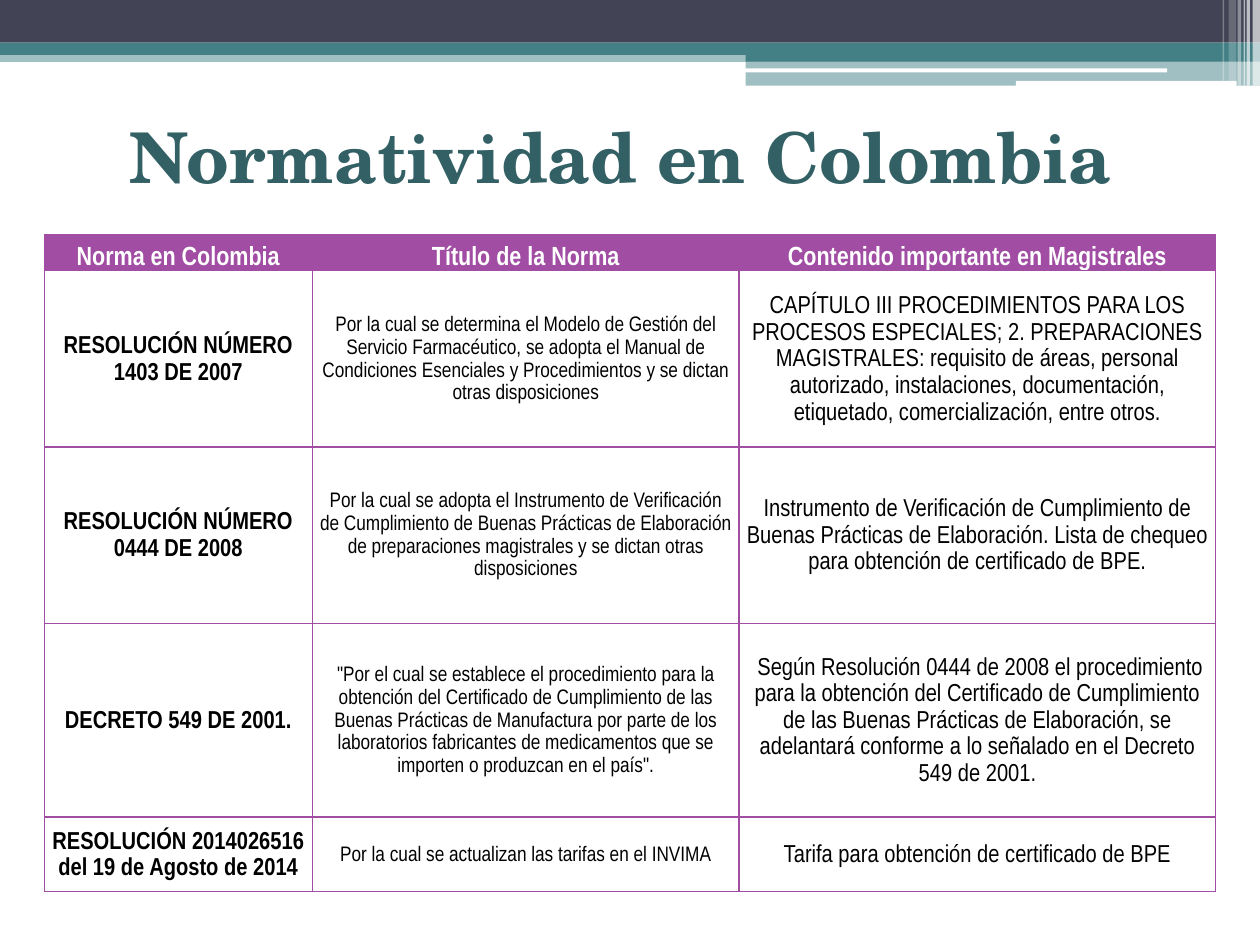
from dataclasses import dataclass

from lxml import etree
from pptx import Presentation
from pptx.dml.color import RGBColor
from pptx.enum.shapes import MSO_SHAPE
from pptx.enum.text import MSO_ANCHOR, PP_ALIGN
from pptx.oxml.ns import qn
from pptx.util import Cm, Pt

RECT = MSO_SHAPE.RECTANGLE
ROUNDED = MSO_SHAPE.ROUNDED_RECTANGLE
CENTER = PP_ALIGN.CENTER
MIDDLE = MSO_ANCHOR.MIDDLE
BOTTOM = MSO_ANCHOR.BOTTOM

COLORS = {
    "navy": "424456",
    "teal": "438086",
    "title": "326065",
    "purple": "A04DA3",
    "white": "FFFFFF",
    "black": "000000",
}
TITLE_FONT = "TeX Gyre Schola"
TABLE_FONT = "Arial Narrow"


@dataclass
class Band:
    left: float
    top: float
    width: float
    height: float
    color: str
    opacity: int = 100
    shape: MSO_SHAPE = RECT


@dataclass
class TextStyle:
    font: str
    size: float
    color: str
    bold: bool = False


@dataclass
class Norm:
    name: str
    title: str
    content: str
    height: float


BANDS = [
    Band(0, 1.02, 25.4, 0.23, "teal", 50),
    Band(0, 0, 25.4, 0.86, "navy"),
    Band(0, 0.86, 25.4, 0.25, "teal"),
    Band(15.03, 0.99, 10.37, 0.25, "teal"),
    Band(15.03, 1.23, 10.37, 0.5, "teal", 50),
    Band(15.02, 1.38, 8.51, 0.08, "white", shape=ROUNDED),
    Band(20.48, 1.63, 4.45, 0.1, "white", shape=ROUNDED),
    Band(25.25, 0, 0.15, 1.73, "white", 65),
    Band(25.13, 0, 0.07, 1.73, "white", 65),
    Band(25.07, 0, 0.03, 1.73, "white", 60),
    Band(24.95, 0, 0.07, 1.73, "white", 40),
    Band(24.77, 0, 0.15, 1.63, "white", 20),
    Band(24.65, 0, 0.03, 1.63, "white", 30),
]

HEADER = Norm("Norma en Colombia", "Título de la Norma",
              "Contenido importante en Magistrales", 0.72)
NORMS = [
    Norm("RESOLUCIÓN NÚMERO 1403 DE 2007",
         "Por la cual se determina el Modelo de Gestión del Servicio Farmacéutico, "
         "se adopta el Manual de Condiciones Esenciales y Procedimientos y se dictan "
         "otras disposiciones",
         "CAPÍTULO III PROCEDIMIENTOS PARA LOS PROCESOS ESPECIALES; 2. PREPARACIONES "
         "MAGISTRALES: requisito de áreas, personal autorizado, instalaciones, "
         "documentación, etiquetado, comercialización, entre otros.", 3.55),
    Norm("RESOLUCIÓN NÚMERO 0444 DE 2008",
         "Por la cual se adopta el Instrumento de Verificación de Cumplimiento de "
         "Buenas Prácticas de Elaboración de preparaciones magistrales y se dictan "
         "otras disposiciones",
         "Instrumento de Verificación de Cumplimiento de Buenas Prácticas de "
         "Elaboración. Lista de chequeo para obtención de certificado de BPE.", 3.55),
    Norm("DECRETO 549 DE 2001.",
         '"Por el cual se establece el procedimiento para la obtención del Certificado '
         "de Cumplimiento de las Buenas Prácticas de Manufactura por parte de los "
         "laboratorios fabricantes de medicamentos que se importen o produzcan en el "
         'país".',
         " Según Resolución 0444 de 2008 el procedimiento para la obtención del "
         "Certificado de Cumplimiento de las Buenas Prácticas de Elaboración, se "
         "adelantará conforme a lo señalado en el Decreto 549 de 2001.", 3.91),
    Norm("RESOLUCIÓN 2014026516 del 19 de Agosto de 2014",
         "Por la cual se actualizan las tarifas en el INVIMA",
         "Tarifa para obtención de certificado de BPE", 1.5),
]
COLUMN_WIDTHS = [5.41, 8.6, 9.61]
HEADER_STYLE = TextStyle(TABLE_FONT, 15, "white", True)
NORM_STYLES = [
    TextStyle(TABLE_FONT, 14, "black", True),
    TextStyle(TABLE_FONT, 12, "black"),
    TextStyle(TABLE_FONT, 14, "black"),
]


def rgb(name: str) -> RGBColor:
    return RGBColor.from_string(COLORS[name])


def draw_band(slide, band: Band) -> None:
    bar = slide.shapes.add_shape(band.shape, Cm(band.left), Cm(band.top),
                                 Cm(band.width), Cm(band.height))
    bar.shadow.inherit = False
    bar.line.fill.background()
    bar.fill.solid()
    bar.fill.fore_color.rgb = rgb(band.color)
    if band.opacity < 100:
        color = bar.fill._xPr.find(qn("a:solidFill"))[0]
        etree.SubElement(color, qn("a:alpha"), val=str(band.opacity * 1000))


def write_text(frame, text: str, style: TextStyle, spacing: float = 1.0) -> None:
    frame.word_wrap = True
    paragraph = frame.paragraphs[0]
    paragraph.alignment = CENTER
    paragraph.line_spacing = spacing
    run = paragraph.add_run()
    run.text = text
    run.font.name = style.font
    run.font.size = Pt(style.size)
    run.font.bold = style.bold
    run.font.color.rgb = rgb(style.color)


def draw_borders(cell, column: int) -> None:
    last = len(COLUMN_WIDTHS) - 1
    widths = {
        "a:lnL": 1 if column > 0 else 0.75,
        "a:lnR": 1 if column < last else 0.75,
        "a:lnT": 0.75,
        "a:lnB": 0.75,
    }
    properties = cell._tc.get_or_add_tcPr()
    for position, (side, width) in enumerate(widths.items()):
        border = etree.Element(qn(side), w=str(Pt(width)))
        fill = etree.SubElement(border, qn("a:solidFill"))
        etree.SubElement(fill, qn("a:srgbClr"), val=COLORS["purple"])
        properties.insert(position, border)


def draw_table(slide) -> None:
    rows = [HEADER, *NORMS]
    table = slide.shapes.add_table(
        len(rows), len(COLUMN_WIDTHS), Cm(0.89), Cm(4.73),
        Cm(sum(COLUMN_WIDTHS)), Cm(sum(row.height for row in rows))).table
    table.horz_banding = False
    for column, width in zip(table.columns, COLUMN_WIDTHS):
        column.width = Cm(width)
    for row_index, norm in enumerate(rows):
        is_header = row_index == 0
        table.rows[row_index].height = Cm(norm.height)
        for column_index, text in enumerate((norm.name, norm.title, norm.content)):
            cell = table.cell(row_index, column_index)
            cell.margin_left = cell.margin_right = Cm(0.13)
            cell.margin_top = cell.margin_bottom = Cm(0)
            cell.vertical_anchor = BOTTOM if is_header else MIDDLE
            if is_header:
                cell.fill.solid()
                cell.fill.fore_color.rgb = rgb("purple")
            else:
                cell.fill.background()
            draw_borders(cell, column_index)
            style = HEADER_STYLE if is_header else NORM_STYLES[column_index]
            write_text(cell.text_frame, text, style, 1.15)


def main() -> None:
    presentation = Presentation()
    presentation.slide_width = Cm(25.4)
    presentation.slide_height = Cm(19.05)
    slide = presentation.slides.add_slide(presentation.slide_layouts[6])
    for band in BANDS:
        draw_band(slide, band)
    title = slide.shapes.add_textbox(Cm(2.21), Cm(2.16), Cm(20.6), Cm(1.96))
    write_text(title.text_frame, "Normatividad en Colombia",
               TextStyle(TITLE_FONT, 40, "title", True))
    draw_table(slide)
    presentation.save("out.pptx")


if __name__ == "__main__":
    main()
